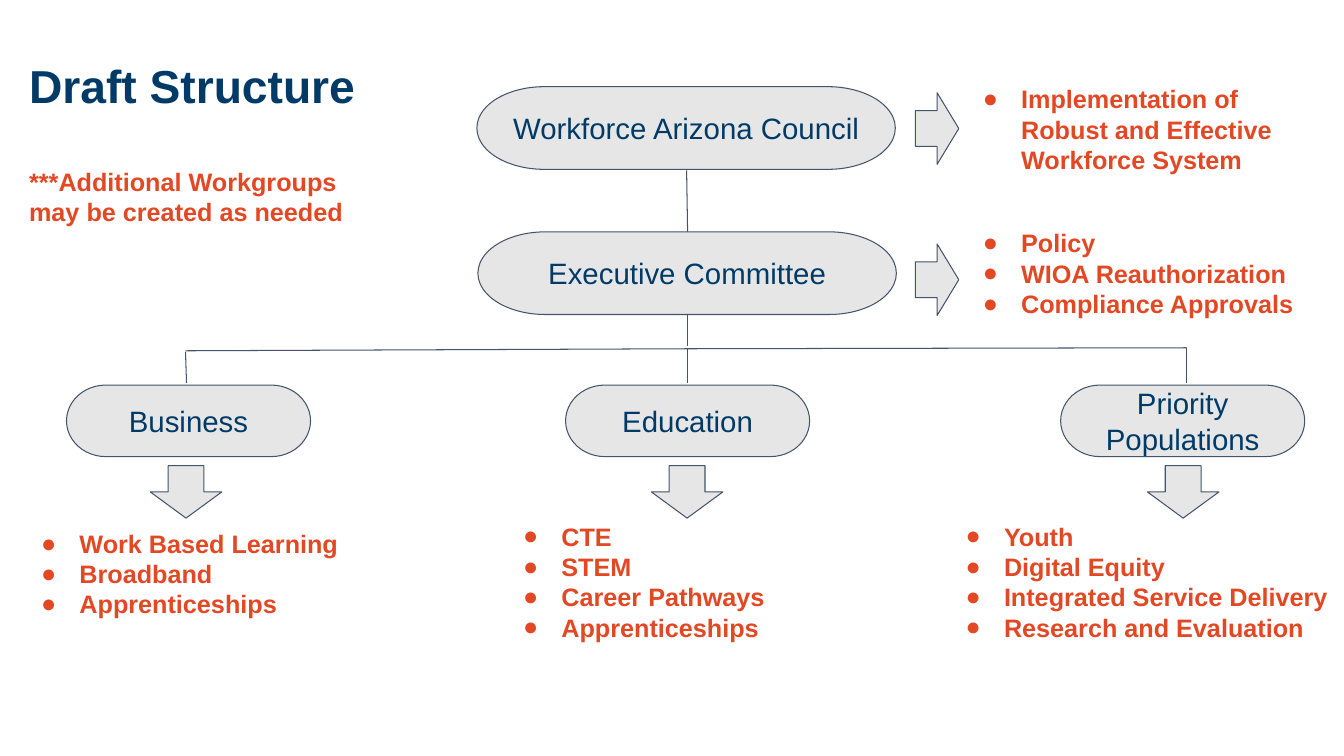
"""Build the draft council structure slide."""
from dataclasses import dataclass

from lxml.etree import SubElement
from pptx import Presentation
from pptx.dml.color import RGBColor
from pptx.enum.shapes import MSO_CONNECTOR, MSO_SHAPE
from pptx.enum.text import MSO_ANCHOR, PP_ALIGN
from pptx.oxml.ns import qn
from pptx.util import Inches, Pt

NAVY = RGBColor(0x00, 0x3B, 0x67)
ORANGE = RGBColor(0xE2, 0x48, 0x24)
GRAY = RGBColor(0xE7, 0xE6, 0xE6)
SLATE = RGBColor(0x44, 0x54, 0x6A)

GROUP_FORMAT = {"name": "Arial", "size": Pt(21), "bold": False}
BODY_FORMAT = {"name": "Arial", "size": Pt(18), "bold": True}
TITLE_FORMAT = {"name": "Arial", "size": Pt(33), "bold": True}
FRAME_FORMAT = {
    "word_wrap": True,
    "margin_left": Inches(0.1),
    "margin_right": Inches(0.1),
    "margin_top": Inches(0.1),
    "margin_bottom": Inches(0.1),
}


@dataclass(frozen=True)
class Box:
    left: float
    top: float
    width: float
    height: float

    def lengths(self):
        return [Inches(value) for value in (self.left, self.top, self.width, self.height)]


@dataclass(frozen=True)
class Group:
    name: str
    box: Box
    arrow_kind: MSO_SHAPE
    arrow: Box
    duties_box: Box
    duties: tuple[str, ...]


@dataclass(frozen=True)
class Line:
    start: tuple[float, float]
    end: tuple[float, float]


def council(name: str, left: float, top: float, arrow_top: float,
            duties_box: Box, *duties: str) -> Group:
    return Group(name, Box(left, top, 4.15, 0.82), MSO_SHAPE.RIGHT_ARROW,
                 Box(9.08, arrow_top, 0.43, 0.71), duties_box, duties)


def workgroup(name: str, left: float, arrow_left: float,
              duties_box: Box, *duties: str) -> Group:
    return Group(name, Box(left, 3.82, 2.42, 0.71), MSO_SHAPE.DOWN_ARROW,
                 Box(arrow_left, 4.62, 0.71, 0.52), duties_box, duties)


GROUPS = [
    council("Workforce Arizona Council", 4.73, 0.86, 0.92, Box(9.53, 0.73, 3.58, 1.11),
            "Implementation of Robust and Effective Workforce System"),
    council("Executive Committee", 4.74, 2.3, 2.42, Box(9.53, 2.16, 3.67, 1.11),
            "Policy", "WIOA Reauthorization", "Compliance Approvals"),
    workgroup("Business", 0.66, 1.49, Box(0.19, 5.14, 3.7, 1.11),
              "Work Based Learning", "Broadband", "Apprenticeships"),
    workgroup("Education", 5.61, 6.46, Box(4.97, 5.07, 3.39, 1.41),
              "CTE", "STEM", "Career Pathways", "Apprenticeships"),
    workgroup("Priority Populations", 10.52, 11.38, Box(9.36, 5.07, 3.97, 1.41),
              "Youth", "Digital Equity", "Integrated Service Delivery",
              "Research and Evaluation"),
]
LINES = [
    Line((6.81, 1.69), (6.82, 2.3)),
    Line((6.82, 3.12), (6.82, 3.43)),
    Line((6.82, 3.46), (11.77, 3.45)),
    Line((1.84, 3.48), (6.82, 3.46)),
    Line((6.82, 3.45), (6.82, 3.8)),
    Line((11.77, 3.45), (11.77, 3.8)),
    Line((1.84, 3.49), (1.85, 3.8)),
]


def apply_format(target, values: dict) -> None:
    for name, value in values.items():
        setattr(target, name, value)


def write(paragraph, text: str, values: dict, color: RGBColor) -> None:
    run = paragraph.add_run()
    run.text = text
    apply_format(run.font, values)
    run.font.color.rgb = color


def add_filled_shape(slide, kind: MSO_SHAPE, box: Box):
    shape = slide.shapes.add_shape(kind, *box.lengths())
    shape.shadow.inherit = False
    shape.fill.solid()
    shape.fill.fore_color.rgb = GRAY
    shape.line.color.rgb = SLATE
    shape.line.width = Pt(0.75)
    return shape


def add_text_frame(slide, box: Box):
    frame = slide.shapes.add_textbox(*box.lengths()).text_frame
    apply_format(frame, FRAME_FORMAT)
    return frame


def add_bullet(paragraph) -> None:
    properties = paragraph._p.get_or_add_pPr()
    properties.set("marL", str(Inches(0.5)))
    properties.set("indent", str(Inches(-0.38)))
    color = SubElement(properties, qn("a:buClr"))
    SubElement(color, qn("a:srgbClr"), val=str(ORANGE))
    SubElement(properties, qn("a:buFont"), typeface="Arial")
    SubElement(properties, qn("a:buChar"), char="●")


def add_duties(slide, group: Group) -> None:
    frame = add_text_frame(slide, group.duties_box)
    for index, duty in enumerate(group.duties):
        paragraph = frame.add_paragraph() if index else frame.paragraphs[0]
        add_bullet(paragraph)
        write(paragraph, duty, BODY_FORMAT, ORANGE)


def add_group(slide, group: Group) -> None:
    shape = add_filled_shape(slide, MSO_SHAPE.FLOWCHART_TERMINATOR, group.box)
    apply_format(shape.text_frame, FRAME_FORMAT)
    shape.text_frame.vertical_anchor = MSO_ANCHOR.MIDDLE
    paragraph = shape.text_frame.paragraphs[0]
    paragraph.alignment = PP_ALIGN.CENTER
    write(paragraph, group.name, GROUP_FORMAT, NAVY)
    add_filled_shape(slide, group.arrow_kind, group.arrow)
    add_duties(slide, group)


def add_line(slide, line: Line) -> None:
    points = [Inches(value) for value in (*line.start, *line.end)]
    connector = slide.shapes.add_connector(MSO_CONNECTOR.STRAIGHT, *points)
    connector.line.color.rgb = SLATE
    connector.line.width = Pt(0.75)
    SubElement(connector._element.spPr, qn("a:effectLst"))


def add_heading(slide) -> None:
    frame = add_text_frame(slide, Box(0.19, 0.47, 3.79, 1.92))
    write(frame.paragraphs[0], "Draft Structure", TITLE_FORMAT, NAVY)
    note = frame.add_paragraph()
    note.space_before = Pt(38)
    write(note, "***Additional Workgroups may be created as needed", BODY_FORMAT, ORANGE)


def main() -> None:
    presentation = Presentation()
    presentation.slide_width = Inches(13.33)
    presentation.slide_height = Inches(7.5)
    slide = presentation.slides.add_slide(presentation.slide_layouts[6])
    for line in LINES:
        add_line(slide, line)
    for group in GROUPS:
        add_group(slide, group)
    add_heading(slide)
    presentation.save("out.pptx")


if __name__ == "__main__":
    main()
